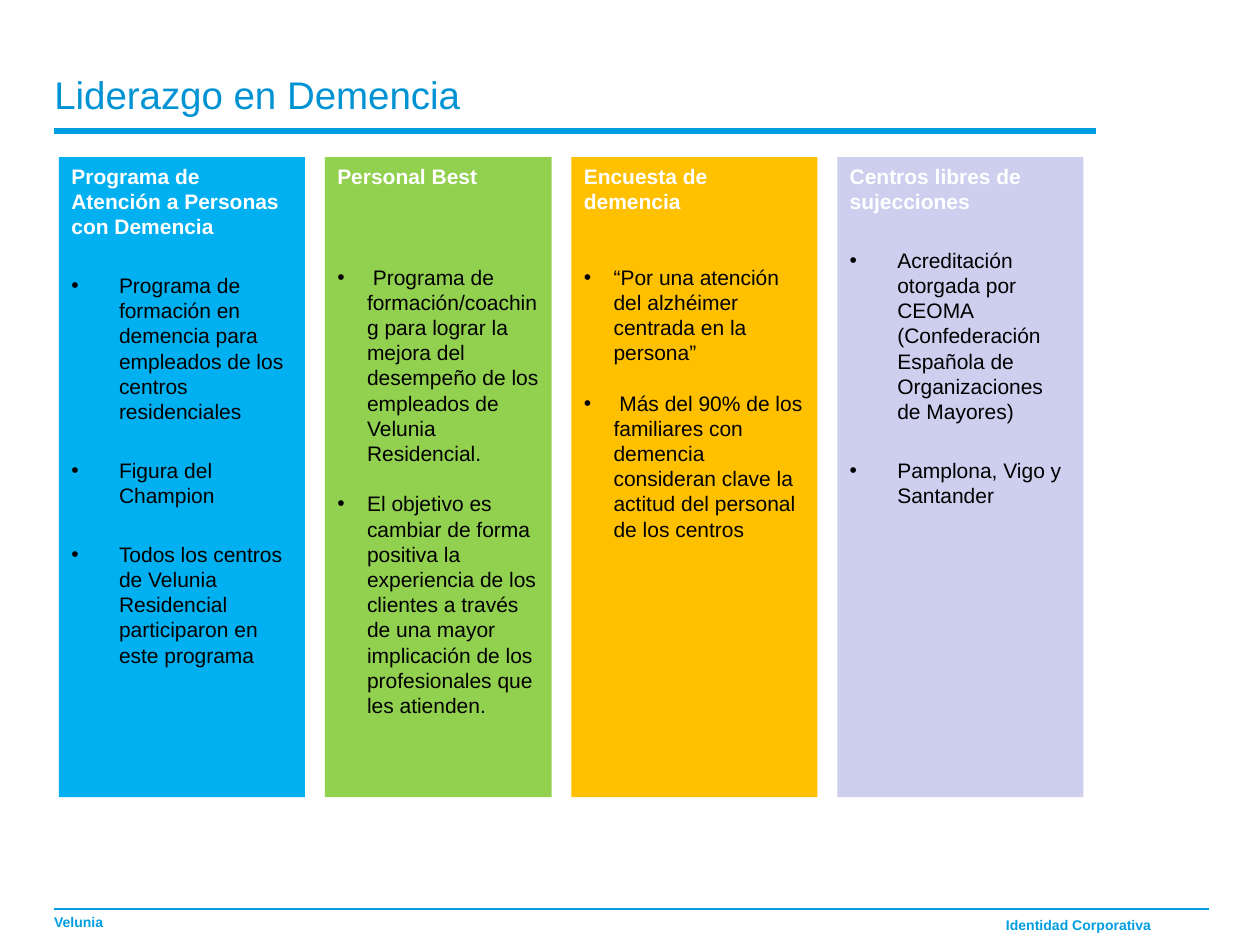
from lxml import etree
from pptx import Presentation
from pptx.dml.color import RGBColor
from pptx.enum.shapes import MSO_CONNECTOR, MSO_SHAPE
from pptx.enum.text import MSO_ANCHOR, MSO_AUTO_SIZE, PP_ALIGN
from pptx.oxml.ns import qn
from pptx.util import Cm, Pt

LEFT, RIGHT = PP_ALIGN.LEFT, PP_ALIGN.RIGHT
TOP, MIDDLE = MSO_ANCHOR.TOP, MSO_ANCHOR.MIDDLE
NO_FIT = MSO_AUTO_SIZE.NONE
RECT = MSO_SHAPE.RECTANGLE
STRAIGHT = MSO_CONNECTOR.STRAIGHT

COLORS = {
    "title": "0093D3", "rule": "009EE0", "white": "FFFFFF", "black": "000000",
    "blue": "00B0F0", "green": "92D050", "amber": "FFC000", "lilac": "CECEEF",
}
LINE = 14.4  # line pitch of the 12 pt column text, in points


def color(name):
    return RGBColor.from_string(COLORS[name])


def write(par, text, size=12, tint="black", bold=False, align=LEFT,
          before=0, pitch=None, hang=None):
    """Fill one paragraph; hang is the bullet indent in cm."""
    par.alignment = align
    par.space_before = Pt(before)
    if pitch:
        par.line_spacing = Pt(pitch)
    if hang:
        props = par._p.get_or_add_pPr()
        props.set("marL", str(Cm(hang)))
        props.set("indent", str(-Cm(hang)))
        etree.SubElement(props, qn("a:buFont")).set("typeface", "Arial")
        etree.SubElement(props, qn("a:buChar")).set("char", "•")
    run = par.add_run()
    run.text = text
    run.font.name = "Arial"
    run.font.size = Pt(size)
    run.font.bold = bold
    run.font.color.rgb = color(tint)


class Page:
    def __init__(self, deck):
        self.slide = deck.slides.add_slide(deck.slide_layouts[5])
        self.shapes = self.slide.shapes

    def title(self, text, x, y, w, h):
        box = self.shapes.title
        box.left, box.top, box.width, box.height = Cm(x), Cm(y), Cm(w), Cm(h)
        frame = box.text_frame
        frame.auto_size = NO_FIT
        frame.vertical_anchor = MIDDLE
        write(frame.paragraphs[0], text, size=22, tint="title")

    def rule(self, x, y, end, width):
        line = self.shapes.add_connector(STRAIGHT, Cm(x), Cm(y), Cm(end), Cm(y))
        line.line.color.rgb = color("rule")
        line.line.width = Pt(width)
        etree.SubElement(line._element.spPr, qn("a:effectLst"))

    def label(self, text, x, y, w, h, align=LEFT):
        frame = self.shapes.add_textbox(Cm(x), Cm(y), Cm(w), Cm(h)).text_frame
        frame.word_wrap = True
        frame.margin_left = frame.margin_right = 0
        frame.margin_top = frame.margin_bottom = 0
        write(frame.paragraphs[0], text, size=8, tint="rule", bold=True, align=align)

    def column(self, head, items, x, y, w, h, fill, hang, gaps):
        box = self.shapes.add_shape(RECT, Cm(x), Cm(y), Cm(w), Cm(h))
        box.shadow.inherit = False
        box.fill.solid()
        box.fill.fore_color.rgb = color(fill)
        box.line.fill.background()
        frame = box.text_frame
        frame.word_wrap = True
        frame.vertical_anchor = TOP
        write(frame.paragraphs[0], head, tint="white", bold=True, pitch=LINE)
        for item, gap in zip(items, gaps):
            write(frame.add_paragraph(), item, before=gap, pitch=LINE, hang=hang)


def main():
    deck = Presentation()
    deck.slide_width, deck.slide_height = Cm(25.4), Cm(19.05)
    page = Page(deck)

    # Header
    page.rule(1.09, 2.64, 22.1, 3)
    page.title("Liderazgo en Demencia", 0.84, 1.32, 22.86, 1.17)

    # Columns: heading, fill, width, bullet indent, space before bullets, bullets
    wide = LINE + 4.8
    columns = [
        ("Programa de Atención a Personas con Demencia", "blue", 4.96, 0.96,
         [wide] * 3,
         ["Programa de formación en demencia para empleados de los centros "
          "residenciales",
          "Figura del Champion",
          "Todos los centros de Velunia Residencial participaron en este programa"]),
        ("Personal Best", "green", 4.57, 0.6, [3 * LINE, LINE],
         [" Programa de formación/coaching para lograr la mejora del desempeño "
          "de los empleados de Velunia Residencial.",
          "El objetivo es cambiar de forma positiva la experiencia de los "
          "clientes a través de una mayor implicación de los profesionales que "
          "les atienden."]),
        ("Encuesta de demencia", "amber", 4.96, 0.6, [2 * LINE, LINE],
         ["“Por una atención del alzhéimer centrada en la persona”",
          " Más del 90% de los familiares con demencia consideran clave la "
          "actitud del personal de los centros"]),
        ("Centros libres de sujecciones", "lilac", 4.96, 0.96, [wide] * 2,
         ["Acreditación otorgada por CEOMA (Confederación Española de "
          "Organizaciones de Mayores)",
          "Pamplona, Vigo y Santander"]),
    ]
    x = 1.19
    for head, fill, width, hang, gaps, items in columns:
        page.column(head, items, x, 3.17, width, 12.9, fill, hang, gaps)
        x += width + 0.4

    # Footer
    page.rule(1.09, 18.33, 24.37, 1)
    page.label("Velunia", 1.09, 18.42, 4.8, 0.7)
    page.label("Identidad Corporativa", 19.43, 18.47, 3.78, 0.56, align=RIGHT)

    deck.save("out.pptx")


if __name__ == "__main__":
    main()
